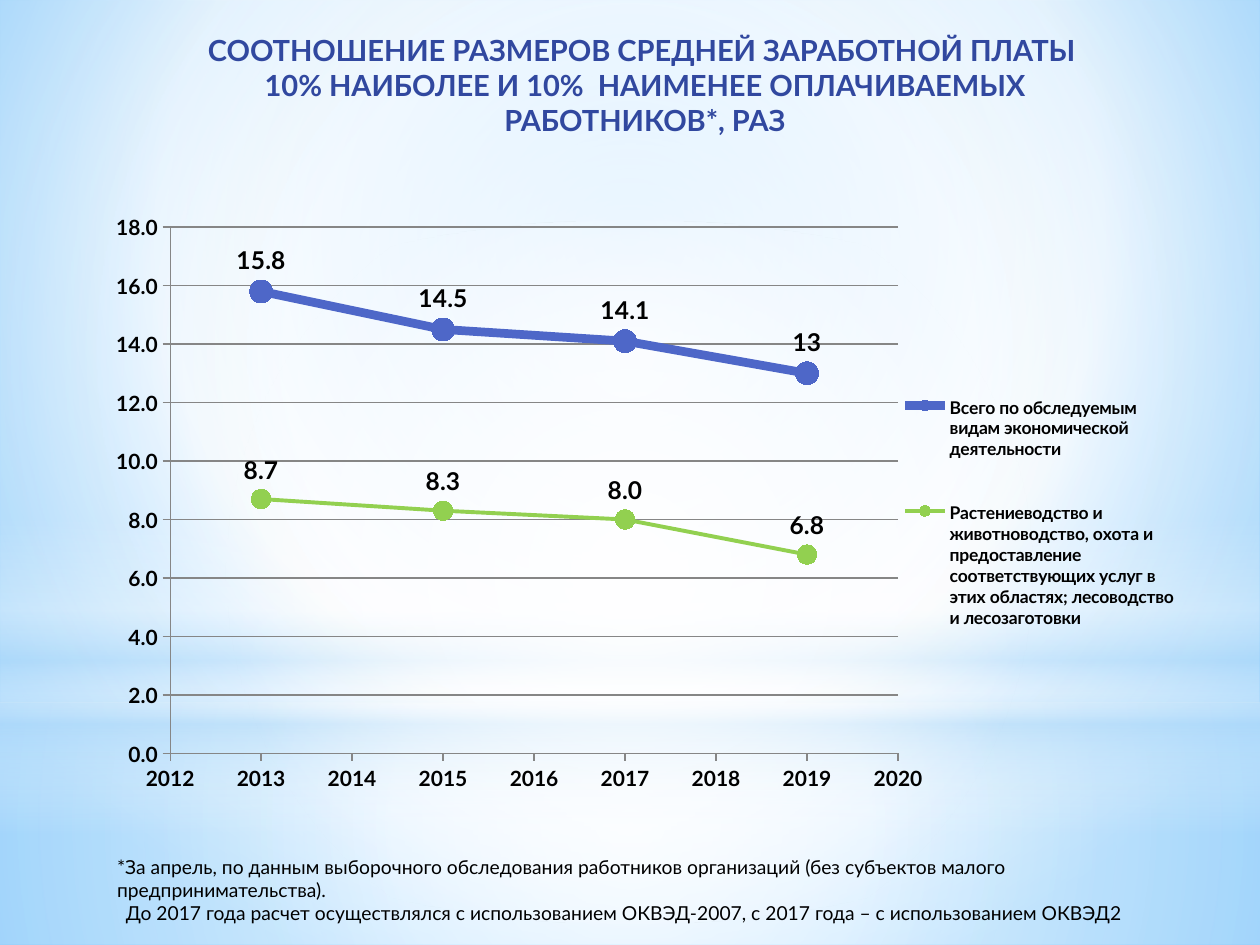
from lxml.etree import SubElement
from pptx import Presentation
from pptx.chart.data import XyChartData
from pptx.chart.datalabel import DataLabels
from pptx.dml.color import RGBColor
from pptx.enum.chart import XL_CHART_TYPE, XL_LABEL_POSITION, XL_LEGEND_POSITION
from pptx.enum.chart import XL_MARKER_STYLE, XL_TICK_MARK
from pptx.enum.shapes import MSO_SHAPE
from pptx.enum.text import MSO_ANCHOR, PP_ALIGN
from pptx.oxml import parse_xml
from pptx.oxml.ns import qn
from pptx.util import Cm, Pt

NAVY = RGBColor(0x31, 0x48, 0x9F)
BLUE = RGBColor(0x4E, 0x67, 0xC8)
GREEN = RGBColor(0x92, 0xD0, 0x50)
GREY = RGBColor(0x86, 0x86, 0x86)
BLACK = RGBColor(0, 0, 0)
WHITE = RGBColor(0xFF, 0xFF, 0xFF)
SKY = RGBColor(0xB4, 0xDC, 0xFA)
PALE = RGBColor(0x9E, 0xD5, 0xFF)
DEEP = RGBColor(0x5B, 0xB9, 0xFF)
FONT = "Lato"


def blend(fill, root, stops, rect=None):
    """Give a gradient of (place, colour, opacity): round to rect, or downward."""
    fill.gradient()
    grad = root.find(".//" + qn("a:gradFill"))
    for part in list(grad):
        grad.remove(part)
    marks = SubElement(grad, qn("a:gsLst"))
    for place, color, alpha in stops:
        mark = SubElement(marks, qn("a:gs"), pos=str(place * 1000))
        tint = SubElement(mark, qn("a:srgbClr"), val=str(color))
        if alpha < 100:
            SubElement(tint, qn("a:alpha"), val=str(alpha * 1000))
    if rect:
        way = SubElement(grad, qn("a:path"), path="circle")
        sides = {side: str(n * 1000) for side, n in zip("ltrb", rect)}
        SubElement(way, qn("a:fillToRect"), **sides)
    else:
        SubElement(grad, qn("a:lin"), ang="5400000", scaled="0")


def write(par, text, size, color=BLACK, bold=False, align=PP_ALIGN.LEFT, left=0):
    run = par.add_run()
    run.text = text
    run.font.name, run.font.size, run.font.bold = FONT, Pt(size), bold
    run.font.color.rgb = color
    par.alignment = align
    par.line_spacing = 1.0
    par.space_before = par.space_after = Pt(0)
    props = par._p.get_or_add_pPr()
    props.set("marL", str(int(Cm(left))))
    props.set("indent", "0")


prs = Presentation()
prs.slide_width, prs.slide_height = Cm(25.4), Cm(19.05)
slide = prs.slides.add_slide(prs.slide_layouts[5])

# Backdrop
MID = (50, 50, 50, 50)
back = slide.background.fill
blend(back, slide._element, [(0, PALE, 100), (60, WHITE, 100), (100, DEEP, 100)],
      (20, 10, 20, 60))
layers = [
    (MSO_SHAPE.RECTANGLE, 14.17, 4.88, MID,
     [(0, WHITE, 91), (37, WHITE, 76), (100, SKY, 79)]),
    (MSO_SHAPE.RECTANGLE, 0, 14.17, MID,
     [(0, WHITE, 89), (48, WHITE, 62), (100, SKY, 79)]),
    (MSO_SHAPE.RECTANGLE, 10.46, 6.35, None,
     [(0, WHITE, 0), (29, WHITE, 30), (45, SKY, 40), (55, WHITE, 26),
      (65, SKY, 60), (100, WHITE, 0)]),
    (MSO_SHAPE.OVAL, 4.45, 14.17, MID, [(0, WHITE, 100), (56, WHITE, 0)]),
]
for kind, top, high, rect, stops in layers:
    shape = slide.shapes.add_shape(kind, 0, Cm(top), prs.slide_width, Cm(high))
    shape.shadow.inherit = False
    shape.line.fill.background()
    blend(shape.fill, shape._element, stops, rect)

# Title
title = slide.shapes.title
slide.shapes._spTree.append(title._element)
title.left, title.top, title.width, title.height = Cm(3.1), Cm(0.53), Cm(19.8), Cm(2.2)
frame = title.text_frame
frame.word_wrap = True
frame.vertical_anchor = MSO_ANCHOR.TOP
heads = ["СООТНОШЕНИЕ РАЗМЕРОВ СРЕДНЕЙ ЗАРАБОТНОЙ ПЛАТЫ ",
         "10% НАИБОЛЕЕ И 10%  НАИМЕНЕЕ ОПЛАЧИВАЕМЫХ РАБОТНИКОВ*, РАЗ"]
for n, text in enumerate(heads):
    par = frame.add_paragraph() if n else frame.paragraphs[0]
    write(par, text, 16.6, color=NAVY, bold=True, align=PP_ALIGN.CENTER)

# Chart: name, values, colour, line width, marker size, label format
years = [2013, 2015, 2017, 2019]
rows = [
    ("Всего по обследуемым видам экономической деятельности",
     [15.8, 14.5, 14.1, 13], BLUE, 5, 13, "General"),
    ("Растениеводство и животноводство, охота и предоставление соответствующих "
     "услуг в этих областях; лесоводство и лесозаготовки",
     [8.7, 8.3, 8, 6.8], GREEN, 2.25, 11, "0.0"),
]
data = XyChartData()
for name, vals, *_ in rows:
    line = data.add_series(name)
    for year, val in zip(years, vals):
        line.add_data_point(year, val)
chart = slide.shapes.add_chart(XL_CHART_TYPE.XY_SCATTER_LINES, Cm(2.03), Cm(4.09),
                               Cm(21.87), Cm(12.24), data).chart
chart.has_title = False
chart.font.name, chart.font.size, chart.font.color.rgb = FONT, Pt(10), BLACK
plot = chart.plots[0]
plot.vary_by_categories = False

for line, (_, _, color, width, size, form) in zip(plot.series, rows):
    line.smooth = False
    line.format.line.color.rgb = color
    line.format.line.width = Pt(width)
    line.marker.style, line.marker.size = XL_MARKER_STYLE.CIRCLE, size
    line.marker.format.fill.solid()
    line.marker.format.fill.fore_color.rgb = color
    line.marker.format.line.color.rgb = color
    labels = DataLabels(line._element.get_or_add_dLbls())
    labels.show_value = True
    labels.position = XL_LABEL_POSITION.ABOVE
    labels.number_format, labels.number_format_is_linked = form, False
    labels.font.name, labels.font.size, labels.font.bold = FONT, Pt(14), True
    labels.font.color.rgb = BLACK

axes = [(chart.category_axis, 2012, 2020, 1, "General", False),
        (chart.value_axis, 0, 18, 2, "0.0", True)]
for axis, low, high, step, form, grid in axes:
    axis.minimum_scale, axis.maximum_scale, axis.major_unit = low, high, step
    axis.major_tick_mark, axis.minor_tick_mark = XL_TICK_MARK.OUTSIDE, XL_TICK_MARK.NONE
    axis.has_major_gridlines = grid
    axis.format.line.color.rgb = GREY
    labels = axis.tick_labels
    labels.number_format, labels.number_format_is_linked = form, False
    labels.font.name, labels.font.size, labels.font.bold = FONT, Pt(12), True
    labels.font.color.rgb = BLACK
chart.value_axis.major_gridlines.format.line.color.rgb = GREY

chart.has_legend = True
legend = chart.legend
legend.position, legend.include_in_layout = XL_LEGEND_POSITION.RIGHT, False
legend.font.name, legend.font.size, legend.font.bold = FONT, Pt(10), True
legend.font.color.rgb = BLACK

# Fixed places of the plot and the legend, as shares of the chart
space = "http://schemas.openxmlformats.org/drawingml/2006/chart"
area = chart._chartSpace.find(".//" + qn("c:plotArea"))
for owner, inner, spot in [(area, True, (0.064, 0.04, 0.671, 0.867)),
                           (legend._element, False, (0.75, 0.25, 0.25, 0.52))]:
    for old in owner.findall(qn("c:layout")):
        owner.remove(old)
    layout = parse_xml(f'<c:layout xmlns:c="{space}"><c:manualLayout/></c:layout>')
    if inner:
        SubElement(layout[0], qn("c:layoutTarget"), val="inner")
    for tag in ("xMode", "yMode"):
        SubElement(layout[0], qn("c:" + tag), val="edge")
    for tag, share in zip("xywh", spot):
        SubElement(layout[0], qn("c:" + tag), val=str(share))
    owner.insert(0 if inner else 1, layout)

# Footnote
note = slide.shapes.add_textbox(Cm(2.11), Cm(17.12), Cm(21.34), Cm(1.2)).text_frame
note.word_wrap = True
write(note.paragraphs[0], "*За апрель, по данным выборочного обследования работников "
      "организаций (без субъектов малого предпринимательства).", 11)
write(note.add_paragraph(), "До 2017 года расчет осуществлялся с использованием "
      "ОКВЭД-2007, с 2017 года – с использованием ОКВЭД2", 11, left=0.18)

prs.save("out.pptx")
